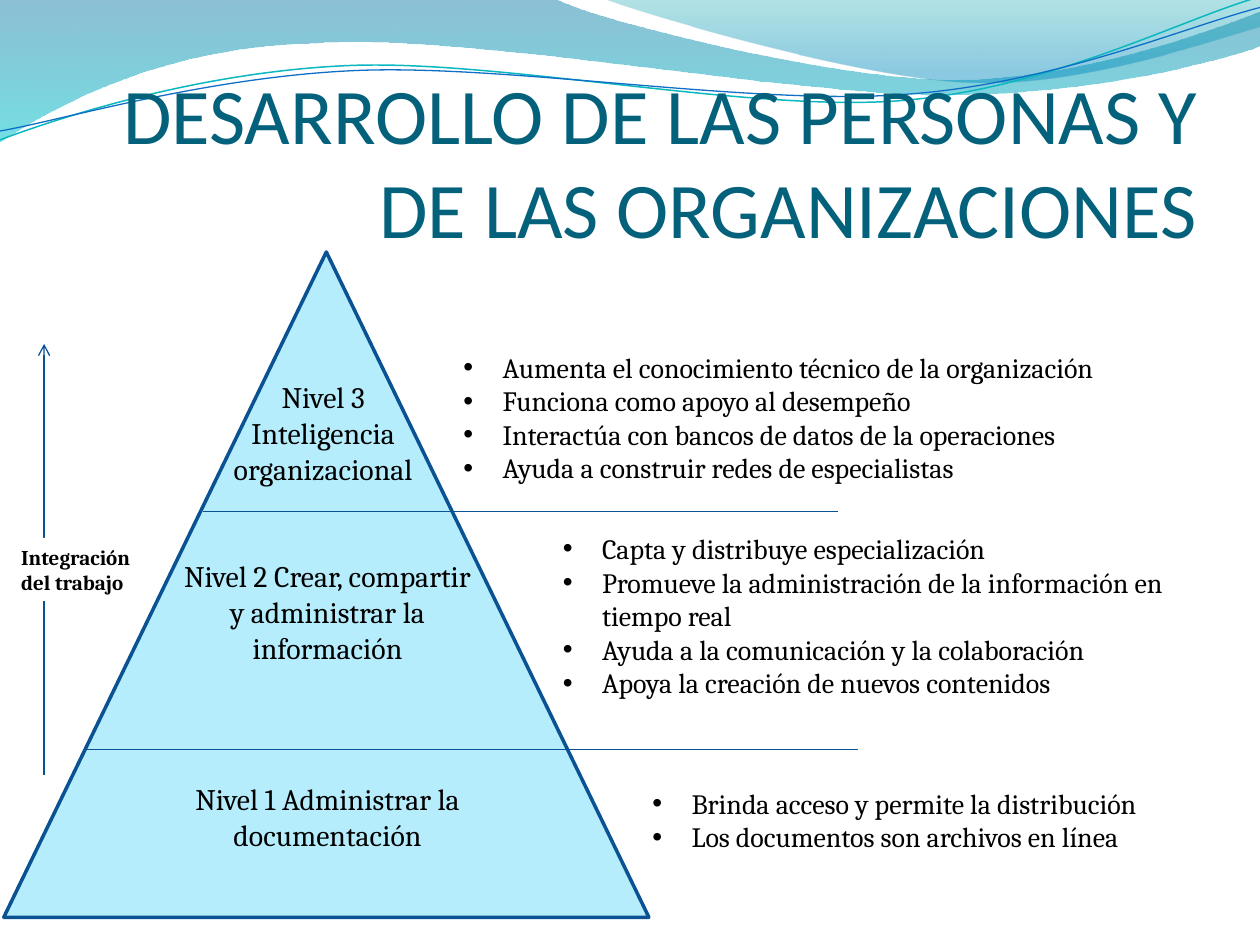
import math

from lxml import etree
from pptx import Presentation
from pptx import util as u
from pptx.dml.color import RGBColor
from pptx.enum import shapes, text
from pptx.oxml.ns import qn

HUES = {
    "title": "04617B", "ink": "000000", "paper": "FFFFFF",
    "face": "B5EDFD", "edge": "0B5292", "rule": "095295",
    "teal": "0AB8BF", "blue": "0F6FC6",
    "deep": "0074A1", "aqua": "00C6CF", "sea": "00A1A9", "sky": "008BBF",
}
ALIGN = {"l": text.PP_ALIGN.LEFT, "c": text.PP_ALIGN.CENTER, "r": text.PP_ALIGN.RIGHT}


def hue(name):
    return RGBColor.from_string(HUES[name])


def turn(point, hub, angle):
    x, y = point[0] - hub[0], point[1] - hub[1]
    cos, sin = math.cos(math.radians(angle)), math.sin(math.radians(angle))
    return hub[0] + x * cos - y * sin, hub[1] + x * sin + y * cos


def write(frame, lines, size=17, font="Cambria", color="ink", bold=False,
          align="l", bullet=False, pad=(0.1, 0.05, 0.1, 0.05), low=False):
    """Fill a text frame; low anchors at the bottom without resizing."""
    frame.word_wrap = True
    frame.margin_left, frame.margin_top, frame.margin_right, frame.margin_bottom = map(
        u.Inches, pad)
    frame.vertical_anchor = text.MSO_ANCHOR.BOTTOM if low else text.MSO_ANCHOR.TOP
    frame.auto_size = (text.MSO_AUTO_SIZE.NONE if low
                       else text.MSO_AUTO_SIZE.SHAPE_TO_FIT_TEXT)
    for i, line in enumerate(lines):
        para = frame.add_paragraph() if i else frame.paragraphs[0]
        para.alignment = ALIGN[align]
        run = para.add_run()
        run.text = line
        run.font.size, run.font.name, run.font.bold = u.Pt(size), font, bold
        run.font.color.rgb = hue(color)
        if bullet:
            props = para._p.get_or_add_pPr()
            props.set("marL", str(u.Inches(0.31)))
            props.set("indent", str(-u.Inches(0.31)))
            etree.SubElement(props, qn("a:buFont")).set("typeface", "Arial")
            etree.SubElement(props, qn("a:buChar")).set("char", "•")


class Board:
    """Holds the slide and draws each kind of element on it."""

    def __init__(self, slide):
        self.shapes = slide.shapes

    def paint(self, shape, fill=None, line=None, width=0.75):
        shape.shadow.inherit = False
        if fill:
            shape.fill.solid()
            shape.fill.fore_color.rgb = hue(fill)
        else:
            shape.fill.background()
        if line:
            shape.line.color.rgb = hue(line)
            shape.line.width = u.Pt(width)
        else:
            shape.line.fill.background()

    def free(self, start, parts, close, hub=None, tilt=0):
        """Draw line ends (2 numbers) and cubic curves (6 numbers) from start."""
        pts = [start] + [p[i:i + 2] for p in parts for i in range(0, len(p), 2)]
        if hub:
            pts = [turn(p, hub, -tilt) for p in pts]
        pts = [(u.Inches(x), u.Inches(y)) for x, y in pts]
        pen = self.shapes.build_freeform(*pts[0])
        pen.add_line_segments(pts[1:], close=close)
        shape = pen.convert_to_shape()
        shape.rotation = tilt
        ends = shape.element.spPr.iter(qn("a:lnTo"))
        ends = iter(list(ends))
        for part in parts:
            group = [next(ends) for _ in range(len(part) // 2)]
            if len(group) == 3:
                curve = etree.Element(qn("a:cubicBezTo"))
                group[0].addprevious(curve)
                for end in group:
                    curve.append(end[0])
                    end.getparent().remove(end)
        return shape

    def wave(self, start, *parts, hub, color, width):
        self.paint(self.free(start, parts, False, hub, -2.7), line=color, width=width)

    def band(self, start, *parts, stops):
        """Fill an outline from top to bottom; stops are (place, hue, opacity %)."""
        shape = self.free(start, parts, True)
        self.paint(shape)
        shape.fill.gradient()
        shape.fill.gradient_angle = 270
        for stop, (place, color, _) in zip(shape.fill.gradient_stops, stops):
            stop.position = place
            stop.color.rgb = hue(color)
        marks = shape.element.spPr.iter(qn("a:srgbClr"))
        for mark, (_, _, alpha) in zip(marks, stops):
            etree.SubElement(mark, qn("a:alpha")).set("val", str(alpha * 1000))

    def shape(self, kind, box, fill, line=None, width=0.75):
        shape = self.shapes.add_shape(kind, *map(u.Inches, box))
        self.paint(shape, fill, line, width)
        return shape

    def label(self, box, lines, **style):
        write(self.shapes.add_textbox(*map(u.Inches, box)).text_frame, lines, **style)

    def rule(self, ends, arrow=False):
        line = self.shapes.add_connector(
            shapes.MSO_CONNECTOR.STRAIGHT, *map(u.Inches, ends))
        line.line.color.rgb = hue("rule")
        line.line.width = u.Pt(0.75)
        if arrow:
            etree.SubElement(line.line._get_or_add_ln(), qn("a:tailEnd")).set("type", "arrow")
        etree.SubElement(line.element.spPr, qn("a:effectLst"))


def main():
    deck = Presentation()
    deck.slide_width, deck.slide_height = u.Inches(10), u.Inches(7.5)
    board = Board(deck.slides.add_slide(deck.slide_layouts[6]))

    board.band(
        (0, 0), (4.4, -0.01), (4.76, 0.17, 6.64, 0.63, 7.58, 0.63),
        (8.53, 0.63, 9.58, 0.26, 10, 0.09), (10.01, 0.36),
        (9.83, 0.44, 8.7, 0.76, 7.46, 0.75), (6.22, 0.75, 3.82, 0.28, 2.57, 0.34),
        (1.29, 0.36, 0.46, 0.83, -0.01, 1.13), (0, 0),
        stops=[(0, "deep", 45), (1, "aqua", 55)])
    board.band(
        (4.79, -0.01), (5.09, 0.11, 6.82, 0.62, 7.69, 0.65),
        (8.56, 0.69, 9.61, 0.32, 10, 0.21), (10, 0), (4.79, -0.01),
        stops=[(0, "sea", 30), (0.8, "sky", 45)])
    board.wave(
        (0, 1.11), (0.48, 0.93, 1.58, 0.57, 2.77, 0.52),
        (3.95, 0.47, 5.93, 0.89, 7.13, 0.8), (8.33, 0.71, 9.38, 0.15, 9.98, -0.02),
        hub=(4.99, 0.58), color="teal", width=0.85)
    board.wave(
        (0, 1.04), (0.47, 0.96, 1.64, 0.61, 2.83, 0.56),
        (4.03, 0.51, 5.97, 0.84, 7.17, 0.75), (8.36, 0.67, 9.41, 0.21, 10, 0.06),
        hub=(5, 0.59), color="blue", width=0.75)

    board.label((0.5, 0.77, 9, 1.25),
                ["DESARROLLO DE LAS PERSONAS Y DE LAS ORGANIZACIONES"],
                size=45, font="Calibri", color="title", align="r",
                pad=(0, 0.05, 0, 0), low=True)

    board.shape(shapes.MSO_SHAPE.ISOSCELES_TRIANGLE, (0.03, 2, 5.12, 5.28),
                "face", "edge", 2)
    for box, line in [
        ((1.54, 2.96, 2.05, 0.96), "Nivel 3 Inteligencia organizacional"),
        ((1.3, 4.38, 2.6, 1.25), "Nivel 2 Crear, compartir y administrar la información"),
        ((1.3, 6.15, 2.6, 0.67), "Nivel 1 Administrar la documentación"),
    ]:
        board.label(box, [line], align="c")

    board.rule((1.61, 4.06, 6.65, 4.06))
    board.rule((0.67, 5.95, 6.81, 5.95))
    board.rule((0.35, 6.15, 0.35, 2.73), arrow=True)
    note = board.shape(shapes.MSO_SHAPE.RECTANGLE, (0.07, 4.27, 1.15, 0.5), "paper")
    write(note.text_frame, ["Integración del trabajo"], size=12, bold=True)

    for box, lines in [
        ((3.58, 2.73, 5.59, 1.21), [
            "Aumenta el conocimiento técnico de la organización",
            "Funciona como apoyo al desempeño",
            "Interactúa con bancos de datos de la operaciones",
            "Ayuda a construir redes de especialistas"]),
        ((4.37, 4.17, 5.2, 1.45), [
            "Capta y distribuye especialización",
            "Promueve la administración de la información en tiempo real",
            "Ayuda a la comunicación y la colaboración",
            "Apoya la creación de nuevos contenidos"]),
        ((5.08, 6.19, 4.65, 0.64), [
            "Brinda acceso y permite la distribución",
            "Los documentos son archivos en línea"]),
    ]:
        board.label(box, lines, size=16, bullet=True)

    deck.save("out.pptx")


if __name__ == "__main__":
    main()
